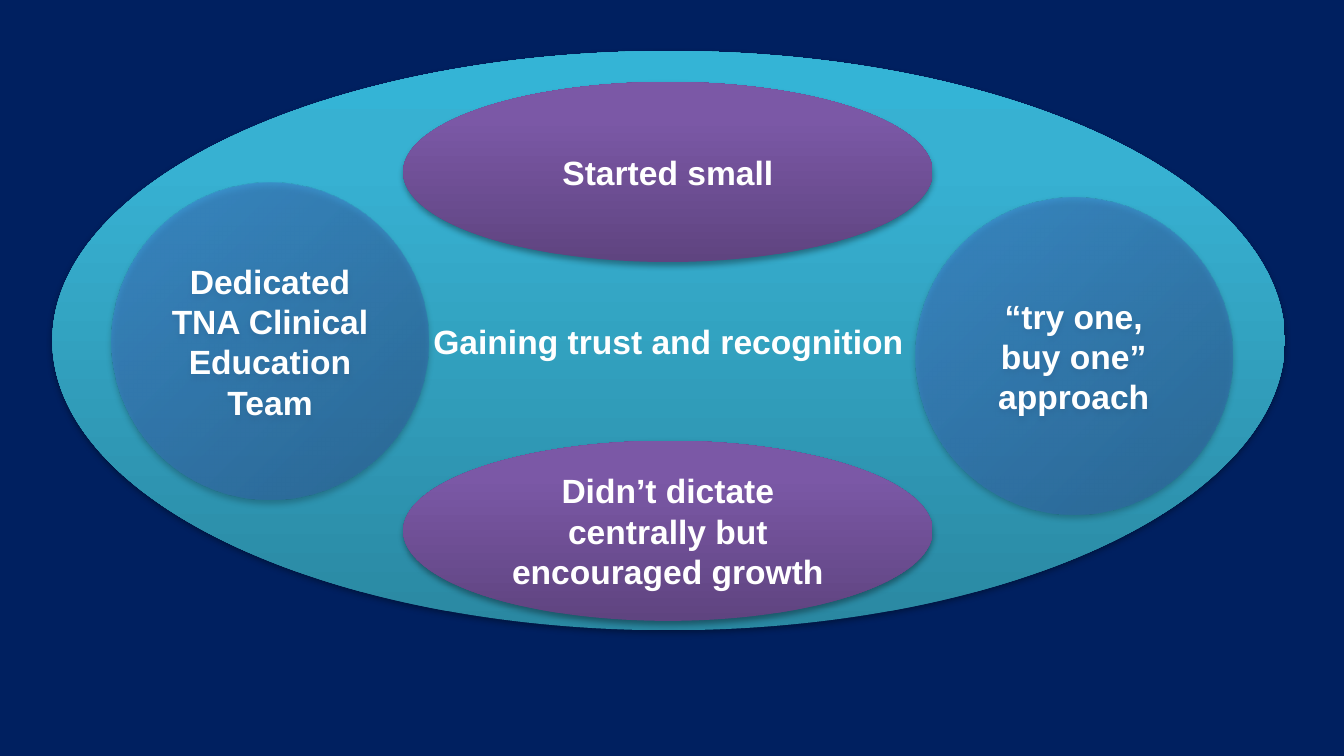
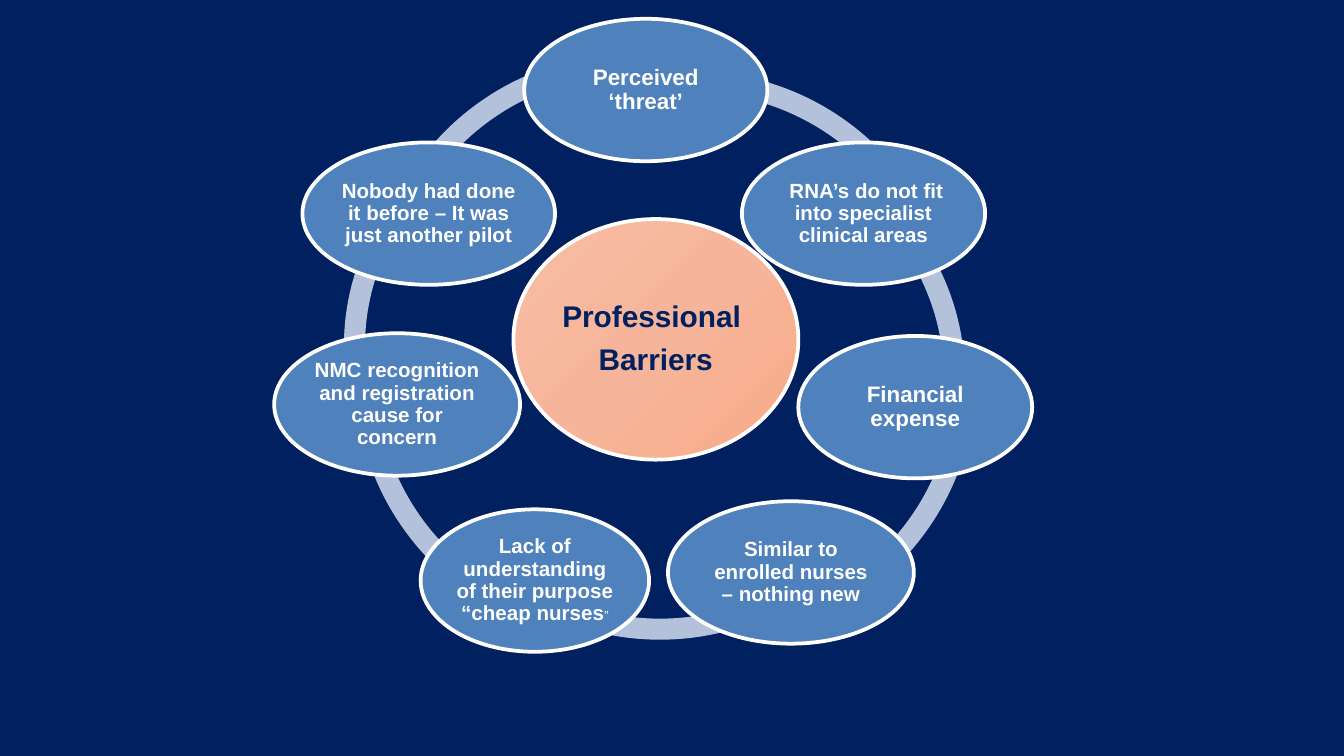
from lxml import etree
from pptx import Presentation
from pptx import util as u
from pptx.dml.color import RGBColor
from pptx.enum import shapes, text
from pptx.oxml import ns

NAVY, WHITE, BLUE, RING = "002060", "FFFFFF", "4F81BD", "B3C1DB"
TEAL = [(0, "2A88A2"), (80, "37B1D2"), (100, "34B4D6")]
PURPLE = [(0, "5F4480"), (80, "7B58A6"), (100, "7C57A8")]
GLASS = [(0, "2F5F99"), (80, "3D7CC7"), (100, "3A7CCB")]
PEACH = [(0, "F7BDA4"), (50, "F6B59A"), (100, "F8AA87")]
NAMESPACE = 'xmlns:a="http://schemas.openxmlformats.org/drawingml/2006/main"'
UPWARD = '<a:lin ang="16200000" scaled="0"/>'
FROM_CORNER = '<a:path path="circle"><a:fillToRect {}/></a:path>'
FROM_BOTTOM_RIGHT = FROM_CORNER.format('l="100000" t="100000"')
FROM_TOP_LEFT = FROM_CORNER.format('r="100000" b="100000"')
SHADOW = (f'<a:outerShdw {NAMESPACE} blurRad="40000" dist="23000" dir="5400000" rotWithShape="0">'
          '<a:srgbClr val="000000"><a:alpha val="35000"/></a:srgbClr></a:outerShdw>')


def add_figure(page, kind, place, fill, direction=None, opacity=100):
    figure = page.shapes.add_shape(kind, *[u.Inches(length) for length in place])
    figure.shadow.inherit = False
    figure.line.fill.background()
    figure.fill.solid()
    if direction is None:
        figure.fill.fore_color.rgb = RGBColor.from_string(fill)
        return figure
    stops = "".join(
        f'<a:gs pos="{position * 1000}"><a:srgbClr val="{colour}">'
        f'<a:alpha val="{opacity * 1000}"/></a:srgbClr></a:gs>'
        for position, colour in fill)
    gradient = etree.fromstring(
        f'<a:gradFill {NAMESPACE} rotWithShape="1"><a:gsLst>{stops}</a:gsLst>{direction}</a:gradFill>')
    properties = figure.element.spPr
    properties.replace(properties.find(ns.qn("a:solidFill")), gradient)
    return figure


def write(box, lines, size, colour):
    frame = box.text_frame
    frame.word_wrap = True
    frame.vertical_anchor = text.MSO_ANCHOR.MIDDLE
    frame.text = "\n".join(lines)
    for para in frame.paragraphs:
        para.alignment = text.PP_ALIGN.CENTER
        para.font.name = "Arial"
        para.font.size = u.Pt(size)
        para.font.bold = True
        para.font.color.rgb = RGBColor.from_string(colour)
    return frame


deck = Presentation()
deck.slide_width = u.Inches(10)
deck.slide_height = deck.slide_width * 9 // 16
backdrop = deck.slide_master.background.fill
backdrop.solid()
backdrop.fore_color.rgb = RGBColor.from_string(NAVY)
blank = deck.slide_layouts[6]
OVAL, ARC = shapes.MSO_SHAPE.OVAL, shapes.MSO_SHAPE.BLOCK_ARC

page = deck.slides.add_slide(blank)
approaches = [
    ("Gaining trust and recognition", (0.39, 0.38, 9.17, 4.31), TEAL, UPWARD, 100),
    ("Didn’t dictate centrally but encouraged growth", (3, 3.28, 3.94, 1.34), PURPLE, UPWARD, 100),
    ("Started small", (3, 0.61, 3.94, 1.34), PURPLE, UPWARD, 100),
    ("Dedicated TNA Clinical Education Team", (0.83, 1.36, 2.36, 2.36), GLASS, FROM_BOTTOM_RIGHT, 60),
    ("“try one, buy one” approach", (6.81, 1.47, 2.36, 2.36), GLASS, FROM_BOTTOM_RIGHT, 60),
]
for label, place, stops, direction, opacity in approaches:
    oval = add_figure(page, OVAL, place, stops, direction, opacity)
    oval.element.spPr.find(ns.qn("a:effectLst")).append(etree.fromstring(SHADOW))
    write(oval, [label], 18, WHITE)

page = deck.slides.add_slide(blank)
ring_arcs = [
    ((2.74, 0.4, 3.92, 3.92), 126.84, 161.48),
    ((2.56, 0.61, 4.33, 3.92), 100.31, 126.7),
    ((2.64, 0.84, 3.92, 3.92), 69.98, 100.72),
    ((2.95, 0.84, 3.92, 3.92), 35.08, 70.74),
    ((3.34, 0.85, 3.92, 3.92), 7.94, 36.4),
    ((2.95, 0.85, 4.23, 3.92), 193.15, 4.55),
    ((3.19, 0.53, 3.92, 3.92), 162.41, 197.16),
]
for place, start, end in ring_arcs:
    arc = add_figure(page, ARC, place, RING)
    for index, value in enumerate((start, end, 0.04)):
        arc.adjustments[index] = value

barriers = [
    (["Professional ", "Barriers"], 16, (3.82, 1.63, 2.12, 1.79)),
    (["Perceived ‘threat’"], 12, (3.9, 0.14, 1.81, 1.06)),
    ([" RNA’s do not fit into specialist clinical areas"], 11, (5.52, 1.06, 1.81, 1.06)),
    (["Financial expense"], 12, (5.94, 2.5, 1.74, 1.06)),
    (["Similar to enrolled nurses – nothing new"], 11, (4.97, 3.73, 1.83, 1.06)),
    (["Lack of understanding of their purpose “cheap nurses"], 11, (3.13, 3.79, 1.7, 1.06)),
    (["NMC recognition and registration cause for concern"], 11, (2.04, 2.48, 1.83, 1.06)),
    (["Nobody had done it before – It was just another pilot"], 11, (2.25, 1.06, 1.88, 1.06)),
]
for lines, size, place in barriers:
    is_hub = len(lines) == 2
    if is_hub:
        oval = add_figure(page, OVAL, place, PEACH, FROM_TOP_LEFT)
    else:
        oval = add_figure(page, OVAL, place, BLUE)
    oval.line.color.rgb = RGBColor.from_string(WHITE)
    oval.line.width = u.Pt(2)

    left, top, width, height = place
    inner_width, inner_height = width * 0.5 ** 0.5, height * 0.5 ** 0.5
    box = page.shapes.add_textbox(
        u.Inches(left + (width - inner_width) / 2), u.Inches(top + (height - inner_height) / 2),
        u.Inches(inner_width), u.Inches(inner_height))
    frame = write(box, lines, size, NAVY if is_hub else WHITE)
    frame.margin_left = frame.margin_right = u.Pt(size * 0.1)
    frame.margin_top = frame.margin_bottom = u.Pt(size * 0.1)
    for para in frame.paragraphs:
        para.line_spacing = 0.9
        para.space_after = u.Pt(size * 0.35)
    if lines[0].endswith("“cheap nurses"):
        span = frame.paragraphs[0].add_run()
        span.text = "”"
        span.font.size = u.Pt(7)
        span.font.bold = False

deck.save("out.pptx")
